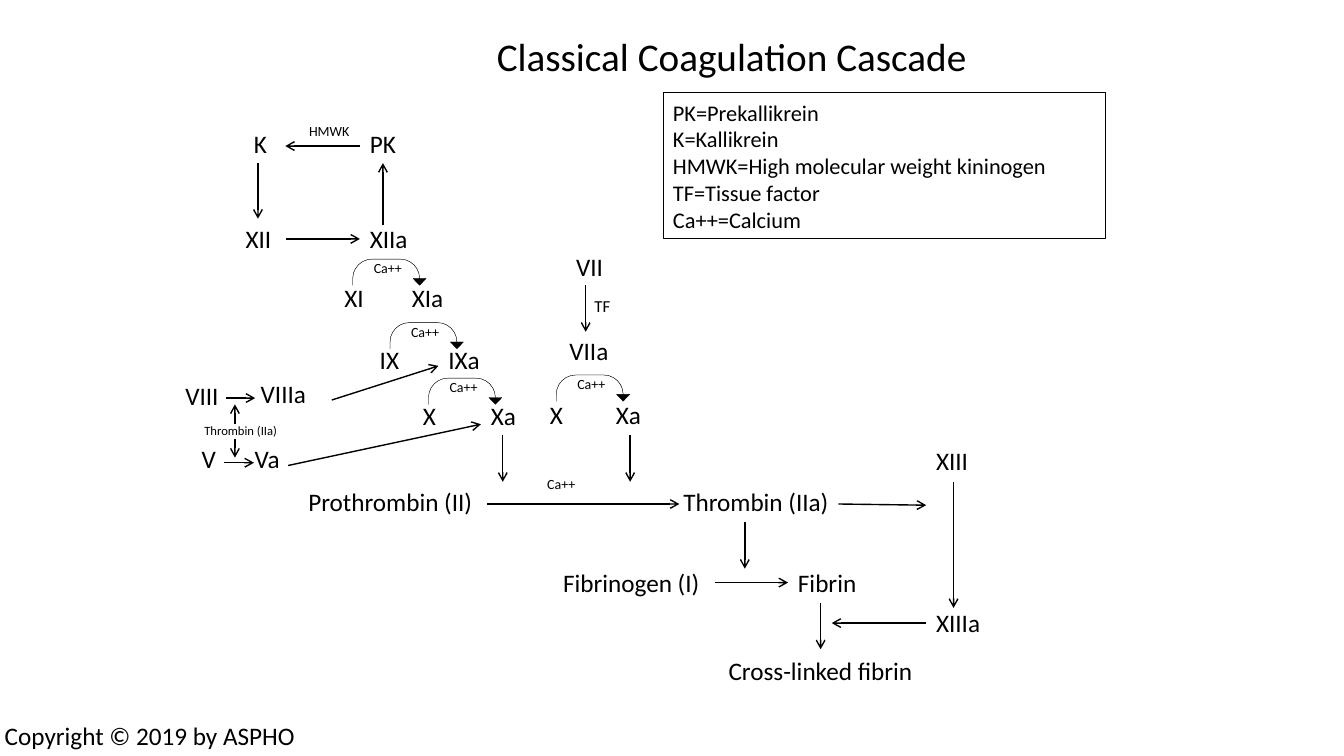
from lxml import etree
from pptx import Presentation
from pptx.dml.color import RGBColor
from pptx.enum.shapes import MSO_CONNECTOR, MSO_SHAPE
from pptx.enum.text import MSO_ANCHOR, MSO_AUTO_SIZE, PP_ALIGN
from pptx.oxml.ns import qn
from pptx.util import Cm, Pt

STRAIGHT = MSO_CONNECTOR.STRAIGHT
BOX, TURN = MSO_SHAPE.RECTANGLE, MSO_SHAPE.U_TURN_ARROW
MIDDLE, TOP = MSO_ANCHOR.MIDDLE, MSO_ANCHOR.TOP
LEFT = PP_ALIGN.LEFT
GROW = MSO_AUTO_SIZE.SHAPE_TO_FIT_TEXT

COLOURS = {"ink": "000000"}
LABEL_HEIGHTS = {18: 1.03, 12: 0.77, 10: 0.68, 9: 0.64}

FACTORS = [
    ("K", 6.15, 3.1, 0.74), ("PK", 9.07, 3.1, 1.93),
    ("XII", 5.94, 5.51, 1.68), ("XIIa", 9.07, 5.51, 2.16),
    ("XI", 8.43, 6.99, 1.14), ("XIa", 10.13, 6.99, 1.47),
    ("IX", 9.32, 8.56, 1.14), ("IXa", 11.05, 8.56, 1.63),
    ("X", 10.41, 9.97, 0.79), ("Xa", 12.12, 9.97, 1.42),
    ("VIII", 4.42, 9.45, 1.68), ("VIIIa", 6.32, 9.42, 2.57),
    ("V", 4.83, 11.05, 0.84), ("Va", 6.17, 11.05, 1.83),
    ("VII", 14.27, 6.2, 1.37), ("VIIa", 14.1, 8.33, 1.88),
    ("X", 13.61, 9.93, 0.79), ("Xa", 15.27, 9.93, 1.47),
    ("Prothrombin (II)", 7.52, 12.12, 4.9),
    ("Thrombin (IIa)", 16.97, 12.12, 4.9),
    ("Fibrinogen (I)", 13.94, 14.17, 4.34), ("Fibrin", 19.86, 14.17, 2.77),
    ("XIII", 23.34, 11.1, 1.85), ("XIIIa", 23.34, 15.19, 1.96),
    ("Cross-linked fibrin", 18.11, 16.38, 6.02),
    ("Copyright © 2019 by ASPHO", -0.13, 18.03, 8),
]
COFACTORS = [
    ("HMWK", 7.54, 2.95, 1.63, 10), ("TF", 14.73, 7.34, 1.32, 12),
    ("Ca++", 13.54, 11.86, 2.06, 10), ("Thrombin (IIa)", 4.9, 10.54, 2.95, 9),
]
CALCIUM_STEPS = [(8.89, 6.53), (9.83, 8.13), (10.8, 9.53), (14.02, 9.45)]
REACTIONS = [
    (9.07, 3.68, 7.19, 3.68), (6.5, 4.11, 6.5, 5.51),
    (7.21, 6.02, 9.07, 6.02), (9.65, 5.66, 9.65, 4.11),
    (5.69, 10.03, 6.43, 10.03), (8.36, 10.08, 11.05, 9.22),
    (5.64, 11.66, 6.4, 11.66), (7.26, 11.73, 12.12, 10.69),
    (5.92, 10.69, 5.92, 10.19), (5.92, 11.05, 5.92, 11.53),
    (14.76, 7.19, 14.76, 8.36), (12.67, 10.95, 12.67, 12.14),
    (15.88, 10.95, 15.88, 12.14), (12.27, 12.7, 17.12, 12.7),
    (21.13, 12.7, 23.34, 12.73), (18.77, 13.16, 18.77, 14.33),
    (18.01, 14.68, 19.86, 14.68), (24.03, 12.14, 24.03, 15.32),
    (20.68, 15.19, 20.68, 16.36), (23.34, 15.7, 20.96, 15.7),
]
ABBREVIATIONS = [
    "PK=Prekallikrein",
    "K=Kallikrein",
    "HMWK=High molecular weight kininogen",
    "TF=Tissue factor",
    "Ca++=Calcium",
]


class CascadeSlide:
    """Draws the parts of a cascade diagram on one slide in one style."""

    def __init__(self, slide):
        self.shapes = slide.shapes
        self.font = "Calibri"
        self.ink = RGBColor.from_string(COLOURS["ink"])

    def set_text(self, frame, lines, size, anchor):
        frame.word_wrap = True
        frame.vertical_anchor = anchor
        frame.text = "\n".join(lines)
        for paragraph in frame.paragraphs:
            paragraph.alignment = LEFT
            paragraph.font.name = self.font
            paragraph.font.size = Pt(size)
            paragraph.font.color.rgb = self.ink

    def outline(self, line, width):
        line.color.rgb = self.ink
        line.width = Pt(width)

    def title(self, text, left, top, width, height):
        heading = self.shapes.add_textbox(Cm(left), Cm(top), Cm(width), Cm(height))
        self.set_text(heading.text_frame, [text], 28, MIDDLE)
        heading.text_frame.paragraphs[0].line_spacing = 0.9

    def label(self, text, left, top, width, size=18):
        label = self.shapes.add_textbox(
            Cm(left), Cm(top), Cm(width), Cm(LABEL_HEIGHTS[size]))
        self.set_text(label.text_frame, [text], size, TOP)
        label.text_frame.auto_size = GROW

    def arrow(self, x1, y1, x2, y2):
        arrow = self.shapes.add_connector(STRAIGHT, Cm(x1), Cm(y1), Cm(x2), Cm(y2))
        self.outline(arrow.line, 1)
        properties = arrow._element.spPr
        etree.SubElement(properties.find(qn("a:ln")), qn("a:tailEnd"), type="arrow")
        etree.SubElement(properties, qn("a:effectLst"))

    def calcium_step(self, left, top):
        turn = self.shapes.add_shape(TURN, Cm(left), Cm(top), Cm(1.85), Cm(0.66))
        turn.shadow.inherit = False
        for index, value in enumerate((0, 0.25, 0.26, 0.74, 1)):
            turn.adjustments[index] = value
        turn.fill.solid()
        turn.fill.fore_color.rgb = self.ink
        self.outline(turn.line, 0.25)
        self.label("Ca++", left + 0.28, top - 0.11, 1.8, 10)

    def legend(self, lines, left, top, width, height):
        legend = self.shapes.add_shape(BOX, Cm(left), Cm(top), Cm(width), Cm(height))
        legend.shadow.inherit = False
        legend.fill.background()
        self.outline(legend.line, 0.5)
        self.set_text(legend.text_frame, lines, 16, MIDDLE)


def main():
    deck = Presentation()
    deck.slide_width, deck.slide_height = Cm(33.87), Cm(19.05)
    cascade = CascadeSlide(deck.slides.add_slide(deck.slide_layouts[6]))
    cascade.title("Classical Coagulation Cascade", 12.27, 0.43, 12.88, 2.11)
    cascade.legend(ABBREVIATIONS, 16.71, 2.34, 11.15, 3.68)
    for reaction in REACTIONS:
        cascade.arrow(*reaction)
    for step in CALCIUM_STEPS:
        cascade.calcium_step(*step)
    for factor in FACTORS + COFACTORS:
        cascade.label(*factor)
    deck.save("out.pptx")


if __name__ == "__main__":
    main()
